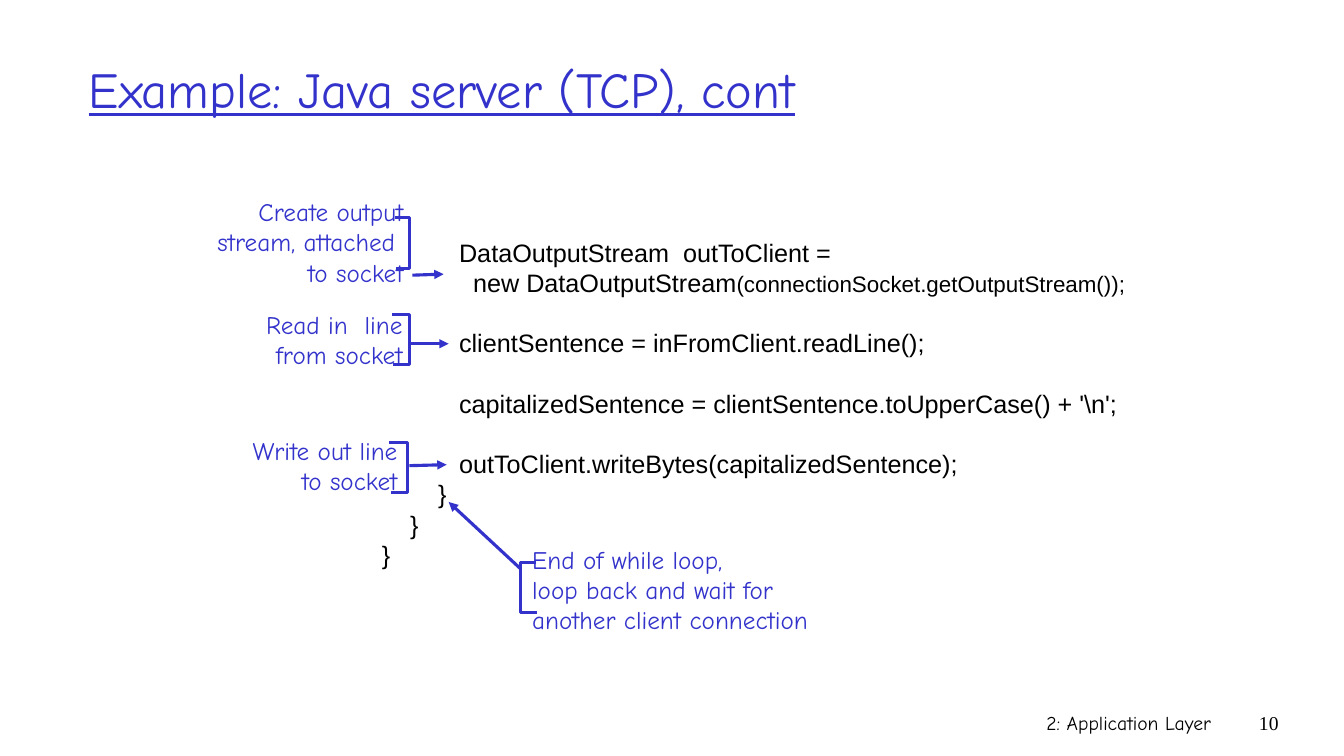
from dataclasses import dataclass

from lxml.etree import SubElement
from pptx import Presentation
from pptx.dml.color import RGBColor
from pptx.enum.text import MSO_ANCHOR, MSO_AUTO_SIZE, PP_ALIGN
from pptx.enum.shapes import MSO_CONNECTOR
from pptx.oxml.ns import qn
from pptx.util import Inches, Pt

BLUE = RGBColor(0x33, 0x33, 0xCC)
BLACK = RGBColor(0x00, 0x00, 0x00)
COMIC, ARIAL, TIMES = "Comic Neue", "Arial", "Times New Roman"
LINE_PITCH = Pt(21.6)
BRACKET_HEIGHT = 0.5
SPACE_WIDTH = 0.0695  # one 18 pt Arial space, in inches


@dataclass
class Annotation:
    lines: list[str]
    box: tuple[float, float, float, float]
    alignment: PP_ALIGN
    spine: float
    bracket_top: float
    top_lip: float
    bottom_lip: float
    arrow: tuple[float, float, float, float]


@dataclass
class CodeLine:
    indent: int
    text: str
    small_text: str = ""
    gap_before: bool = False


ANNOTATIONS = [
    Annotation(["Read in  line", "from socket"], (2.47, 3.02, 1.62, 0.7),
               PP_ALIGN.RIGHT, 4.06, 3.12, 3.89, 3.9, (4.08, 3.41, 4.45, 3.41)),
    Annotation(["Create output", "stream, attached ", "to socket"], (1.81, 1.9, 2.29, 1),
               PP_ALIGN.RIGHT, 4.06, 2.16, 3.92, 3.93, (4.09, 2.73, 4.4, 2.72)),
    Annotation(["Write out line", "to socket"], (2.2, 4.27, 1.84, 0.7),
               PP_ALIGN.RIGHT, 4.04, 4.39, 3.86, 3.88, (4.06, 4.62, 4.43, 4.61)),
    Annotation(["End of while loop,", "loop back and wait for", "another client connection"],
               (5.18, 5.35, 3.15, 1),
               PP_ALIGN.LEFT, 5.16, 5.58, 5.32, 5.33, (5.16, 5.64, 4.45, 4.98)),
]

CODE = [
    CodeLine(11, "DataOutputStream  outToClient ="),
    CodeLine(13, "new DataOutputStream", "(connectionSocket.getOutputStream());"),
    CodeLine(11, "clientSentence = inFromClient.readLine();", gap_before=True),
    CodeLine(11, "capitalizedSentence = clientSentence.toUpperCase() + '\\n';", gap_before=True),
    CodeLine(11, "outToClient.writeBytes(capitalizedSentence);", gap_before=True),
    CodeLine(8, "}"),
    CodeLine(4, "}"),
    CodeLine(0, "}"),
]


def add_run(paragraph, text: str, *, size: float = 18, font: str = COMIC,
            color: RGBColor = BLUE, underline: bool = False) -> None:
    run = paragraph.add_run()
    run.text = text
    run.font.size = Pt(size)
    run.font.name = font
    run.font.color.rgb = color
    if underline:
        run.font.underline = True


def add_text_box(slide, box: tuple[float, float, float, float], anchor=MSO_ANCHOR.TOP):
    frame = slide.shapes.add_textbox(*map(Inches, box)).text_frame
    frame.word_wrap = True
    frame.vertical_anchor = anchor
    return frame


def add_lines(frame, lines: list[str], alignment: PP_ALIGN, *, pitch=None, **text_format) -> None:
    for index, line in enumerate(lines):
        paragraph = frame.add_paragraph() if index else frame.paragraphs[0]
        paragraph.alignment = alignment
        if pitch:
            paragraph.line_spacing = pitch
        add_run(paragraph, line, **text_format)


def add_title(slide, text: str) -> None:
    title = slide.shapes.title
    title.left, title.top, title.width, title.height = map(Inches, (0.78, 0.25, 11.33, 1.25))
    title.text_frame.auto_size = MSO_AUTO_SIZE.NONE
    title.text_frame.vertical_anchor = MSO_ANCHOR.MIDDLE
    add_lines(title.text_frame, [text], PP_ALIGN.LEFT, size=36, underline=True)


def add_code(slide) -> None:
    frame = add_text_box(slide, (3.69, 1.77, 7.65, 4.34))
    frame.margin_top = Inches(0.58)
    for index, line in enumerate(CODE):
        paragraph = frame.add_paragraph() if index else frame.paragraphs[0]
        paragraph.line_spacing = LINE_PITCH
        paragraph.space_before = LINE_PITCH if line.gap_before else Pt(0)
        properties = paragraph._p.get_or_add_pPr()
        properties.set("marL", str(Inches(line.indent * SPACE_WIDTH)))
        properties.set("indent", "0")
        add_run(paragraph, line.text, font=ARIAL, color=BLACK)
        if line.small_text:
            add_run(paragraph, line.small_text, size=16, font=ARIAL, color=BLACK)


def add_bracket(slide, note: Annotation) -> None:
    top, bottom = note.bracket_top, note.bracket_top + BRACKET_HEIGHT
    builder = slide.shapes.build_freeform(Inches(note.top_lip), Inches(top))
    corners = [(note.spine, top), (note.spine, bottom), (note.bottom_lip, bottom)]
    builder.add_line_segments([(Inches(x), Inches(y)) for x, y in corners], close=False)
    shape = builder.convert_to_shape()
    shape.shadow.inherit = False
    shape.fill.background()
    shape.line.color.rgb = BLUE
    shape.line.width = Pt(2.25)


def add_arrow(slide, ends: tuple[float, float, float, float]) -> None:
    connector = slide.shapes.add_connector(MSO_CONNECTOR.STRAIGHT, *map(Inches, ends))
    connector.line.color.rgb = BLUE
    connector.line.width = Pt(2.25)
    SubElement(connector.line._get_or_add_ln(), qn("a:tailEnd"), type="triangle")
    SubElement(connector._element.spPr, qn("a:effectLst"))


def main() -> None:
    presentation = Presentation()
    presentation.slide_width = Inches(13.33)
    presentation.slide_height = Inches(7.5)
    slide = presentation.slides.add_slide(presentation.slide_layouts[5])

    # Footer
    add_lines(add_text_box(slide, (7.89, 7, 4.22, 0.5)), ["2: Application Layer"],
              PP_ALIGN.RIGHT, size=14, color=BLACK)
    add_lines(add_text_box(slide, (12.11, 7, 0.67, 0.5)), ["10"],
              PP_ALIGN.RIGHT, size=14, font=TIMES, color=BLACK)

    # Title and program text
    add_title(slide, "Example: Java server (TCP), cont")
    add_code(slide)

    # Annotations with bracket and arrow
    for note in ANNOTATIONS:
        frame = add_text_box(slide, note.box, MSO_ANCHOR.MIDDLE)
        add_lines(frame, note.lines, note.alignment, pitch=LINE_PITCH)
        add_bracket(slide, note)
        add_arrow(slide, note.arrow)

    presentation.save("out.pptx")


if __name__ == "__main__":
    main()
